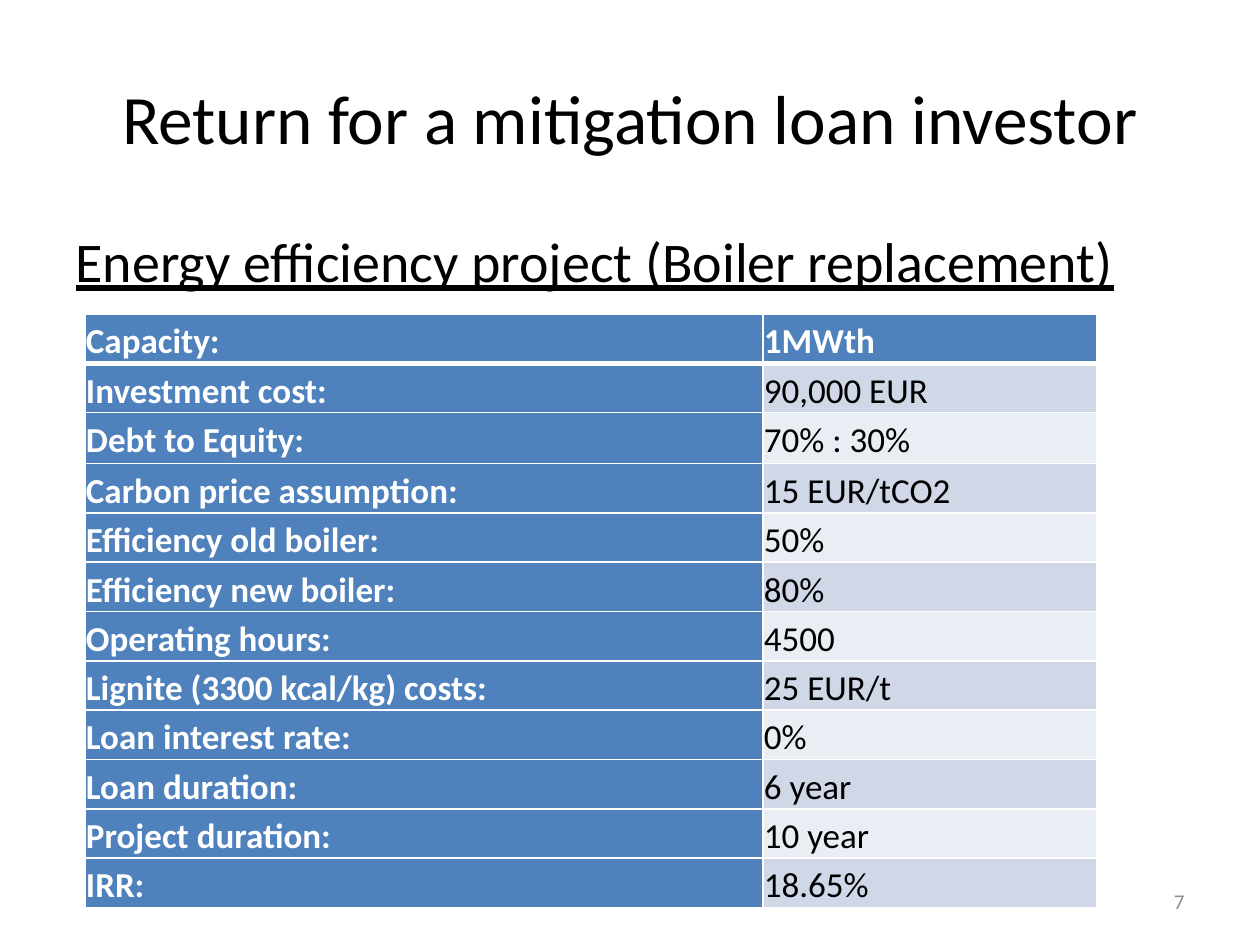
from lxml import etree
from pptx import Presentation
from pptx.dml.color import RGBColor
from pptx.enum.text import MSO_ANCHOR, MSO_AUTO_SIZE, PP_ALIGN
from pptx.oxml.ns import qn
from pptx.util import Emu, Pt

LEFT, CENTER, RIGHT = PP_ALIGN.LEFT, PP_ALIGN.CENTER, PP_ALIGN.RIGHT
JUSTIFY = PP_ALIGN.JUSTIFY
TOP, MIDDLE = MSO_ANCHOR.TOP, MSO_ANCHOR.MIDDLE
NO_FIT = MSO_AUTO_SIZE.NONE

FONT = "Calibri"
BLACK, WHITE, GRAY = "000000", "FFFFFF", "8C8C8C"
BLUE, BANDS = "4F81BD", ("D0D8E8", "E9EDF4")

ROWS = [
    ("Capacity:", "1MWth"),
    ("Investment cost:", "90,000 EUR"),
    ("Debt to Equity:", "70% : 30%"),
    ("Carbon price assumption:", "15 EUR/tCO2"),
    ("Efficiency old boiler:", "50%"),
    ("Efficiency new boiler:", "80%"),
    ("Operating hours:", "4500"),
    ("Lignite (3300 kcal/kg) costs:", "25 EUR/t"),
    ("Loan interest rate:", "0%"),
    ("Loan duration:", "6 year"),
    ("Project duration:", "10 year"),
    ("IRR:", "18.65%"),
]
COLS = (678, 334)
ROW, TALL = 43, 51


def px(n):
    return Emu(round(n * 914400 / 126))


def rgb(code):
    return RGBColor.from_string(code)


def write(frame, text, size, color=BLACK, align=LEFT, bold=False,
          line=None, under=False):
    para = frame.paragraphs[0]
    para.alignment = align
    if line:
        para.line_spacing = line
    run = para.add_run()
    run.text = text
    font = run.font
    font.name, font.size, font.bold = FONT, Pt(size), bold
    font.underline = under
    font.color.rgb = rgb(color)
    return para


def place(shape, x, y, w, h, anchor=TOP):
    """Set the box of a text shape and return its frame."""
    shape.left, shape.top, shape.width, shape.height = map(px, (x, y, w, h))
    frame = shape.text_frame
    frame.word_wrap = True
    frame.auto_size = NO_FIT
    frame.vertical_anchor = anchor
    return frame


def drop_bullet(para):
    props = para._p.get_or_add_pPr()
    props.set("marL", "0")
    props.set("indent", "0")
    etree.SubElement(props, qn("a:buNone"))


def edge(cell, side, width):
    """Draw one white cell border; side is L, R, T or B."""
    line = etree.SubElement(cell._tc.get_or_add_tcPr(), qn("a:ln" + side),
                            w=str(Pt(width)))
    fill = etree.SubElement(line, qn("a:solidFill"))
    etree.SubElement(fill, qn("a:srgbClr"), val=WHITE)


def fill_cell(cell, text, row, col):
    head = row == 0 or col == 0
    cell.margin_left = cell.margin_right = px(1)
    cell.margin_top = cell.margin_bottom = 0
    widths = {"L": 1, "R": 1, "T": 3 if row == 1 else 1,
              "B": 3 if row == 0 else 1}
    for side, width in widths.items():
        edge(cell, side, width)
    cell.fill.solid()
    cell.fill.fore_color.rgb = rgb(BLUE if head else BANDS[(row - 1) % 2])
    write(cell.text_frame, text, 20, color=WHITE if head else BLACK,
          align=JUSTIFY, bold=head, line=1.15)


def add_facts(slide, x, y):
    high = ROW * (len(ROWS) - 1) + TALL
    table = slide.shapes.add_table(len(ROWS), len(COLS), px(x), px(y),
                                   px(sum(COLS)), px(high)).table
    for col, wide in enumerate(COLS):
        table.columns[col].width = px(wide)
    for row, texts in enumerate(ROWS):
        table.rows[row].height = px(TALL if row == 2 else ROW)
        for col, text in enumerate(texts):
            fill_cell(table.cell(row, col), text, row, col)


def main():
    deck = Presentation()
    deck.slide_width, deck.slide_height = px(1260), px(945)
    slide = deck.slides.add_slide(deck.slide_layouts[1])

    title = place(slide.shapes.title, 63, 38, 1134, 157, MIDDLE)
    write(title, "Return for a mitigation loan investor", 39.6, align=CENTER)

    body = place(slide.placeholders[1], 63, 220, 1134, 655)
    drop_bullet(write(body, "Energy efficiency project (Boiler replacement)",
                      32, under=True))

    page = slide.shapes.add_textbox(0, 0, 0, 0)
    write(place(page, 903, 876, 294, 50, MIDDLE), "7", 12, color=GRAY,
          align=RIGHT)

    add_facts(slide, 85, 314)
    deck.save("out.pptx")


if __name__ == "__main__":
    main()
